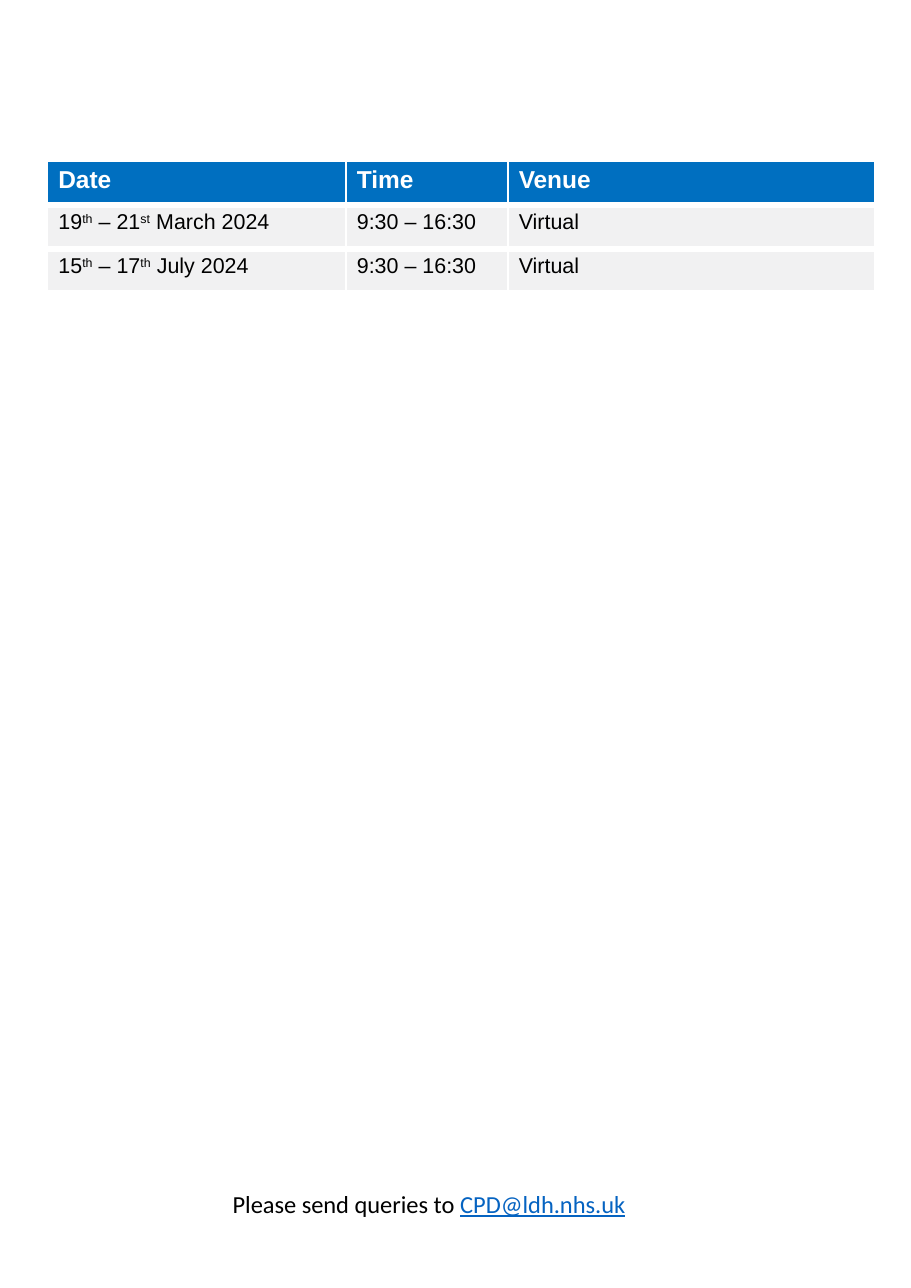
from dataclasses import dataclass

from lxml.etree import SubElement
from pptx import Presentation
from pptx.dml.color import RGBColor
from pptx.enum.text import MSO_AUTO_SIZE, PP_ALIGN
from pptx.oxml.ns import qn
from pptx.table import _Cell
from pptx.text.text import _Paragraph
from pptx.util import Emu, Pt

PX = 9144  # 100 px to the inch

BLUE = RGBColor(0x00, 0x6F, 0xC0)
PALE_GREY = RGBColor(0xF1, 0xF1, 0xF2)
LINK_BLUE = RGBColor(0x05, 0x63, 0xC1)
BLACK = RGBColor(0x00, 0x00, 0x00)
WHITE = RGBColor(0xFF, 0xFF, 0xFF)


def px(length: int) -> Emu:
    return Emu(length * PX)


@dataclass(frozen=True)
class Piece:
    text: str
    raised: bool = False
    link: bool = False


@dataclass(frozen=True)
class Style:
    font: str
    size: int
    color: RGBColor
    bold: bool = False


@dataclass(frozen=True)
class Session:
    date: list[Piece]
    time: str
    venue: str


HEADER_STYLE = Style("Arial", 16, WHITE, bold=True)
BODY_STYLE = Style("Arial", 14, BLACK)
CONTACT_STYLE = Style("Calibri", 16, BLACK)

HEADINGS = ["Date", "Time", "Venue"]
COLUMN_WIDTHS = [271, 147, 333]
ROW_HEIGHT = 40
SESSIONS = [
    Session([Piece("19"), Piece("th", raised=True), Piece(" – 21"),
             Piece("st", raised=True), Piece(" March 2024")], "9:30 – 16:30", "Virtual"),
    Session([Piece("15"), Piece("th", raised=True), Piece(" – 17"),
             Piece("th", raised=True), Piece(" July 2024")], "9:30 – 16:30", "Virtual"),
]
CONTACT = [Piece("Please send queries to "), Piece("CPD@ldh.nhs.uk", link=True)]


def write_pieces(paragraph: _Paragraph, pieces: list[Piece], style: Style) -> None:
    for piece in pieces:
        run = paragraph.add_run()
        run.text = piece.text
        run.font.name = style.font
        run.font.size = Pt(style.size)
        run.font.bold = style.bold
        run.font.underline = piece.link
        run.font.color.rgb = LINK_BLUE if piece.link else style.color
        if piece.raised:
            run.font._element.set("baseline", "30000")


def add_borders(cell: _Cell, top_width: float) -> None:
    properties = cell._tc.get_or_add_tcPr()
    for side, width in (("L", 1.5), ("R", 1.5), ("T", top_width), ("B", 4.5)):
        line = SubElement(properties, qn(f"a:ln{side}"), w=str(Pt(width)))
        fill = SubElement(line, qn("a:solidFill"))
        SubElement(fill, qn("a:srgbClr"), val=str(WHITE))


def fill_cell(cell: _Cell, pieces: list[Piece], style: Style, is_header: bool) -> None:
    add_borders(cell, 1.5 if is_header else 4.5)
    cell.fill.solid()
    cell.fill.fore_color.rgb = BLUE if is_header else PALE_GREY
    cell.margin_left = cell.margin_right = cell.margin_bottom = 0
    cell.margin_top = px(5)
    paragraph = cell.text_frame.paragraphs[0]
    paragraph._p.get_or_add_pPr().set("marL", str(px(10)))
    write_pieces(paragraph, pieces, style)


def main() -> None:
    presentation = Presentation()
    presentation.slide_width = px(827)
    presentation.slide_height = px(1169)
    slide = presentation.slides.add_slide(presentation.slide_layouts[6])

    # Timetable
    rows = [[Piece(heading)] for heading in HEADINGS], *(
        [session.date, [Piece(session.time)], [Piece(session.venue)]]
        for session in SESSIONS
    )
    table = slide.shapes.add_table(
        len(rows), len(HEADINGS), px(43), px(146),
        px(sum(COLUMN_WIDTHS)), px(ROW_HEIGHT * len(rows)),
    ).table
    table.horz_banding = False
    for column, width in zip(table.columns, COLUMN_WIDTHS):
        column.width = px(width)
    for row_index, row in enumerate(rows):
        is_header = row_index == 0
        style = HEADER_STYLE if is_header else BODY_STYLE
        for column_index, pieces in enumerate(row):
            fill_cell(table.cell(row_index, column_index), pieces, style, is_header)

    # Contact line
    contact_box = slide.shapes.add_textbox(px(38), px(1074), px(703), px(37))
    text_frame = contact_box.text_frame
    text_frame.word_wrap = True
    text_frame.auto_size = MSO_AUTO_SIZE.SHAPE_TO_FIT_TEXT
    paragraph = text_frame.paragraphs[0]
    paragraph.alignment = PP_ALIGN.CENTER
    write_pieces(paragraph, CONTACT, CONTACT_STYLE)

    presentation.save("out.pptx")


if __name__ == "__main__":
    main()
